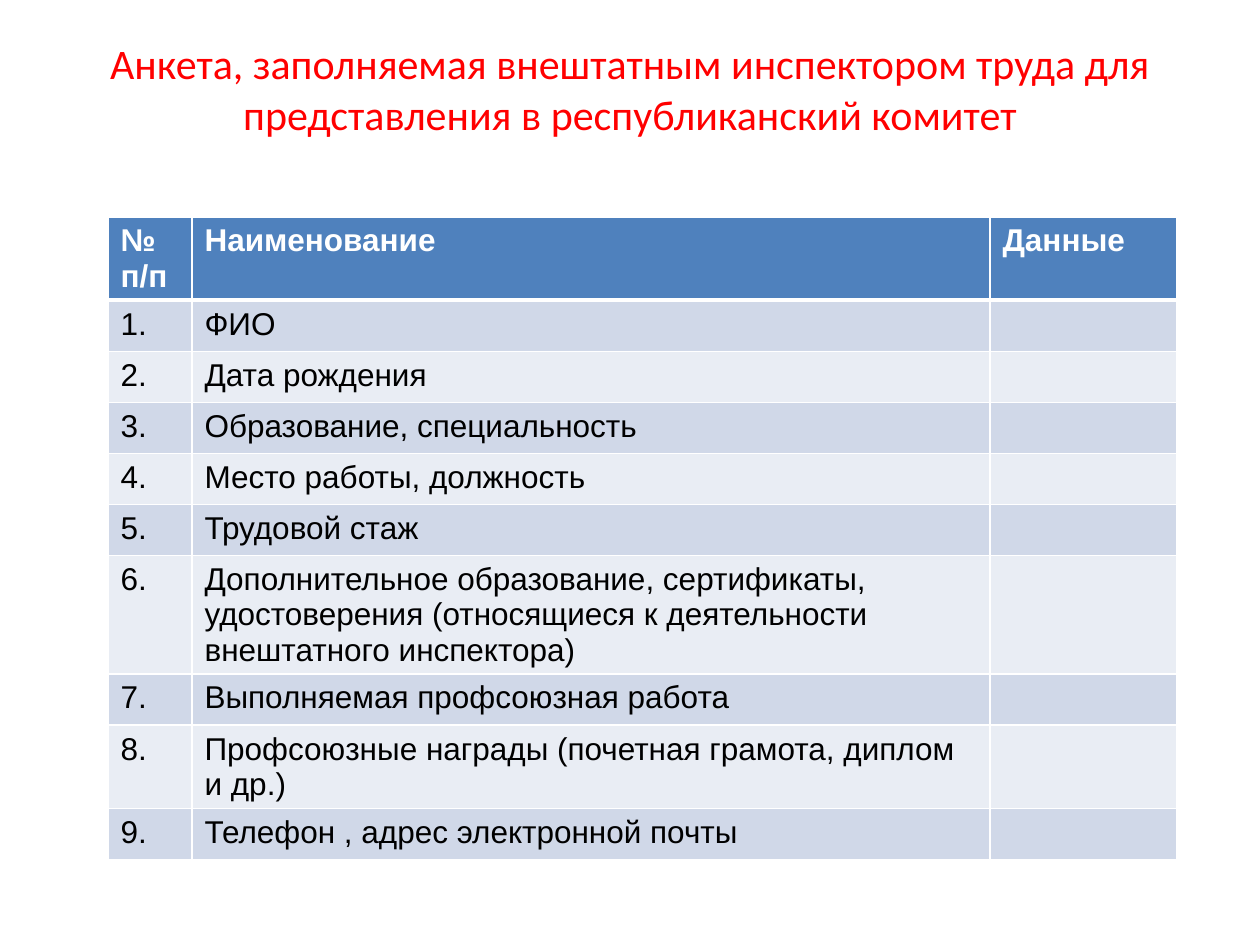
from lxml.etree import SubElement
from pptx import Presentation
from pptx.dml.color import RGBColor
from pptx.enum.text import MSO_ANCHOR, PP_ALIGN
from pptx.oxml.ns import qn
from pptx.util import Pt

PX = 914400 // 126
COLORS = {
    "title": "FF0000",
    "header": "4F81BD",
    "odd": "D0D8E8",
    "even": "E9EDF4",
    "white": "FFFFFF",
    "text": "000000",
}
HEADERS = ["№ п/п", "Наименование", "Данные"]
ITEMS = [
    "ФИО",
    "Дата рождения",
    "Образование, специальность",
    "Место работы, должность",
    "Трудовой стаж",
    "Дополнительное образование, сертификаты, удостоверения "
    "(относящиеся к деятельности внештатного инспектора)",
    "Выполняемая профсоюзная работа",
    "Профсоюзные награды (почетная грамота, диплом и др.)",
    "Телефон , адрес электронной почты",
]
COL_WIDTHS = [84, 798, 187]
ROW_HEIGHT = 51


def px(n):
    return n * PX


def rgb(name):
    return RGBColor.from_string(COLORS[name])


def write(tf, text, size=18, font="Arial", color="text", bold=False, align=PP_ALIGN.LEFT):
    p = tf.paragraphs[0]
    p.alignment = align
    p.font.size = Pt(size)
    if text:
        r = p.add_run()
        r.text = text
        r.font.size = Pt(size)
        r.font.name = font
        r.font.bold = bold
        r.font.color.rgb = rgb(color)


def add_borders(cell, bottom=1):
    tcPr = cell._tc.get_or_add_tcPr()
    widths = {"a:lnL": 1, "a:lnR": 1, "a:lnT": 1, "a:lnB": bottom}
    for i, (tag, width) in enumerate(widths.items()):
        ln = tcPr.makeelement(qn(tag), {"w": str(Pt(width))})
        fill = SubElement(ln, qn("a:solidFill"))
        SubElement(fill, qn("a:srgbClr"), val=COLORS["white"])
        tcPr.insert(i, ln)


def add_title(s, x, y, w, h):
    sp = s.shapes.title
    sp.left, sp.top, sp.width, sp.height = map(px, (x, y, w, h))
    tf = sp.text_frame
    tf.word_wrap = True
    tf.vertical_anchor = MSO_ANCHOR.MIDDLE
    write(tf, "Анкета, заполняемая внештатным инспектором труда для "
          "представления в республиканский комитет",
          size=24, font="Calibri", color="title", align=PP_ALIGN.CENTER)


def add_form_table(s, x, y):
    rows = [HEADERS] + [[f"{n}.", item, ""] for n, item in enumerate(ITEMS, 1)]
    table = s.shapes.add_table(len(rows), len(COL_WIDTHS), px(x), px(y),
                               px(sum(COL_WIDTHS)), px(ROW_HEIGHT * len(rows))).table
    for col, width in zip(table.columns, COL_WIDTHS):
        col.width = px(width)
    for i, row in enumerate(rows):
        table.rows[i].height = px(ROW_HEIGHT)
        header = i == 0
        fill = "header" if header else "odd" if i % 2 else "even"
        for j, text in enumerate(row):
            cell = table.cell(i, j)
            cell.fill.solid()
            cell.fill.fore_color.rgb = rgb(fill)
            add_borders(cell, bottom=3 if header else 1)
            write(cell.text_frame, text, bold=header, color="white" if header else "text")


def main():
    prs = Presentation()
    prs.slide_width, prs.slide_height = px(1260), px(945)
    s = prs.slides.add_slide(prs.slide_layouts[5])
    add_title(s, 63, 38, 1134, 100)
    add_form_table(s, 108, 217)
    prs.save("out.pptx")


if __name__ == "__main__":
    main()
